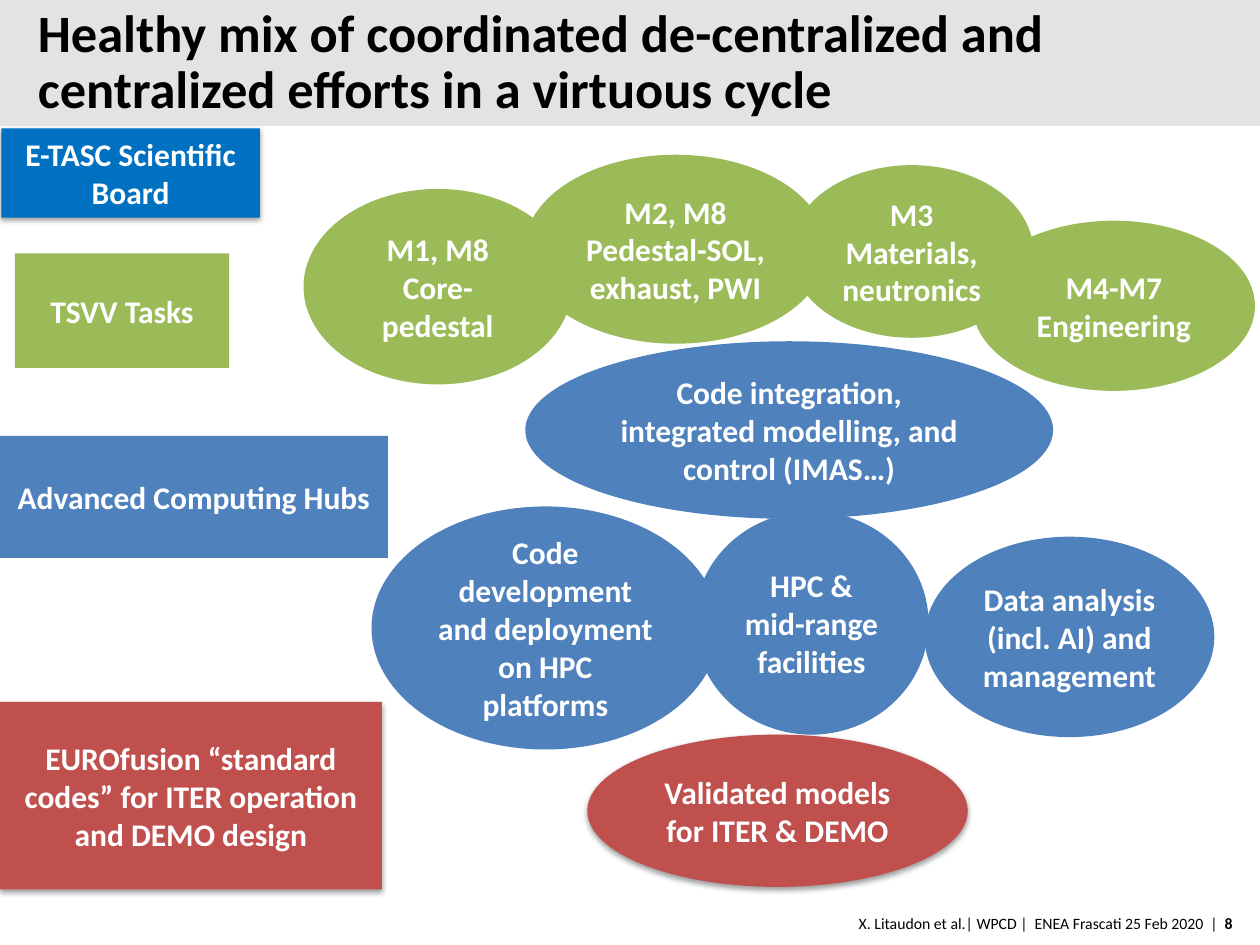
from dataclasses import dataclass

from lxml.etree import SubElement
from pptx import Presentation
from pptx.dml.color import RGBColor
from pptx.enum.shapes import MSO_SHAPE as Shape
from pptx.enum.text import MSO_ANCHOR as Anchor, PP_ALIGN as Align
from pptx.oxml.ns import qn
from pptx.util import Cm, Pt


@dataclass(frozen=True)
class Theme:
    font: str = "Calibri"
    title_size: int = 30
    title_line: int = 32
    label_size: int = 18
    footer_size: int = 9
    black: str = "000000"
    white: str = "FFFFFF"
    band: str = "E3E3E3"
    board: str = "0070C0"
    task: str = "9BBB59"
    hub: str = "4F81BD"
    result: str = "C0504D"


@dataclass(frozen=True)
class Block:
    """A labelled shape; lengths in centimetres, \\v marks a line break."""
    text: str
    kind: Shape
    color: str
    left: float
    top: float
    width: float
    height: float
    shadow: bool = False


THEME = Theme()
BOX, OVAL = Shape.RECTANGLE, Shape.OVAL

# From back to front
BLOCKS = [
    Block("Data analysis (incl. AI) and management", OVAL, THEME.hub, 18.64, 10.82, 5.84, 4.04),
    Block("TSVV Tasks", BOX, THEME.task, 0.3, 5.11, 4.32, 2.31),
    Block("Advanced Computing Hubs", BOX, THEME.hub, 0, 8.79, 7.82, 2.46),
    Block("EUROfusion “standard codes” for ITER operation and DEMO design",
          BOX, THEME.result, 0, 14.15, 7.7, 3.78, shadow=True),
    Block("M2, M8\vPedestal-SOL, exhaust, PWI", OVAL, THEME.task, 10.57, 3.12, 6.1, 3.81),
    Block("M1, M8\vCore-pedestal", OVAL, THEME.task, 6.12, 3.81, 5.41, 3.94),
    Block("Code integration, integrated modelling, and control (IMAS…)",
          OVAL, THEME.hub, 10.59, 6.88, 10.64, 3.58),
    Block("M4-M7 Engineering", OVAL, THEME.task, 19.61, 4.45, 5.69, 3.43),
    Block("M3\vMaterials,\vneutronics", OVAL, THEME.task, 15.93, 3.33, 4.9, 3.48),
    Block("Code development and deployment on HPC platforms",
          OVAL, THEME.hub, 7.49, 10.21, 7.01, 4.9),
    Block("HPC &\vmid-range facilities", OVAL, THEME.hub, 14, 10.31, 4.72, 4.5),
    Block("E-TASC Scientific Board", BOX, THEME.board, 0.03, 2.59, 5.21, 1.8, shadow=True),
    Block("Validated models for ITER & DEMO", OVAL, THEME.result,
          11.84, 14.81, 7.67, 3.07, shadow=True),
]


def set_font(font, size: int, color: str, bold: bool | None = None) -> None:
    font.name = THEME.font
    font.size = Pt(size)
    font.bold = bold
    font.color.rgb = RGBColor.from_string(color)


def add_shadow(shape) -> None:
    effects = shape.element.spPr.find(qn("a:effectLst"))
    shadow = SubElement(effects, qn("a:outerShdw"), blurRad="40000", dist="20000",
                        dir="5400000", rotWithShape="0")
    color = SubElement(shadow, qn("a:srgbClr"), val=THEME.black)
    SubElement(color, qn("a:alpha"), val="38000")


def add_plain_shape(slide, kind: Shape, color: str, *box: float):
    shape = slide.shapes.add_shape(kind, *map(Cm, box))
    shape.shadow.inherit = False
    shape.fill.solid()
    shape.fill.fore_color.rgb = RGBColor.from_string(color)
    shape.line.fill.background()
    return shape


def add_block(slide, block: Block) -> None:
    shape = add_plain_shape(slide, block.kind, block.color,
                            block.left, block.top, block.width, block.height)
    if block.shadow:
        add_shadow(shape)
    frame = shape.text_frame
    frame.word_wrap = True
    frame.vertical_anchor = Anchor.MIDDLE
    paragraph = frame.paragraphs[0]
    paragraph.text = block.text
    paragraph.alignment = Align.CENTER
    set_font(paragraph.font, THEME.label_size, THEME.white, bold=True)


def add_header(slide, text: str) -> None:
    title = slide.shapes.title
    title.left, title.top, title.width, title.height = map(Cm, (0.51, 0, 21.72, 2.54))
    frame = title.text_frame
    frame.word_wrap = True
    frame.vertical_anchor = Anchor.MIDDLE
    paragraph = frame.paragraphs[0]
    paragraph.text = text
    paragraph.alignment = Align.LEFT
    paragraph.line_spacing = Pt(THEME.title_line)
    set_font(paragraph.font, THEME.title_size, THEME.black, bold=True)
    # The grey band lies behind the title
    band = add_plain_shape(slide, BOX, THEME.band, 0, 0, 25.4, 2.54)
    title.element.addprevious(band.element)


def add_footer(slide, text: str, page: str) -> None:
    footer = slide.shapes.add_textbox(*map(Cm, (-0.1, 18.29, 25.2, 0.64)))
    footer.text_frame.word_wrap = True
    paragraph = footer.text_frame.paragraphs[0]
    paragraph.alignment = Align.RIGHT
    set_font(paragraph.font, THEME.footer_size, THEME.black)
    paragraph.add_run().text = text
    number = paragraph.add_run()
    number.text = page
    number.font.bold = True


def main() -> None:
    presentation = Presentation()
    presentation.slide_width, presentation.slide_height = Cm(25.4), Cm(19.05)
    title_only = presentation.slide_layouts[5]
    slide = presentation.slides.add_slide(title_only)

    add_header(slide, "Healthy mix of coordinated de-centralized and "
                      "centralized efforts in a virtuous cycle")
    add_footer(slide, "X. Litaudon et al.| WPCD |  ENEA Frascati 25 Feb 2020  |  ", "8")
    for block in BLOCKS:
        add_block(slide, block)

    presentation.save("out.pptx")


if __name__ == "__main__":
    main()
